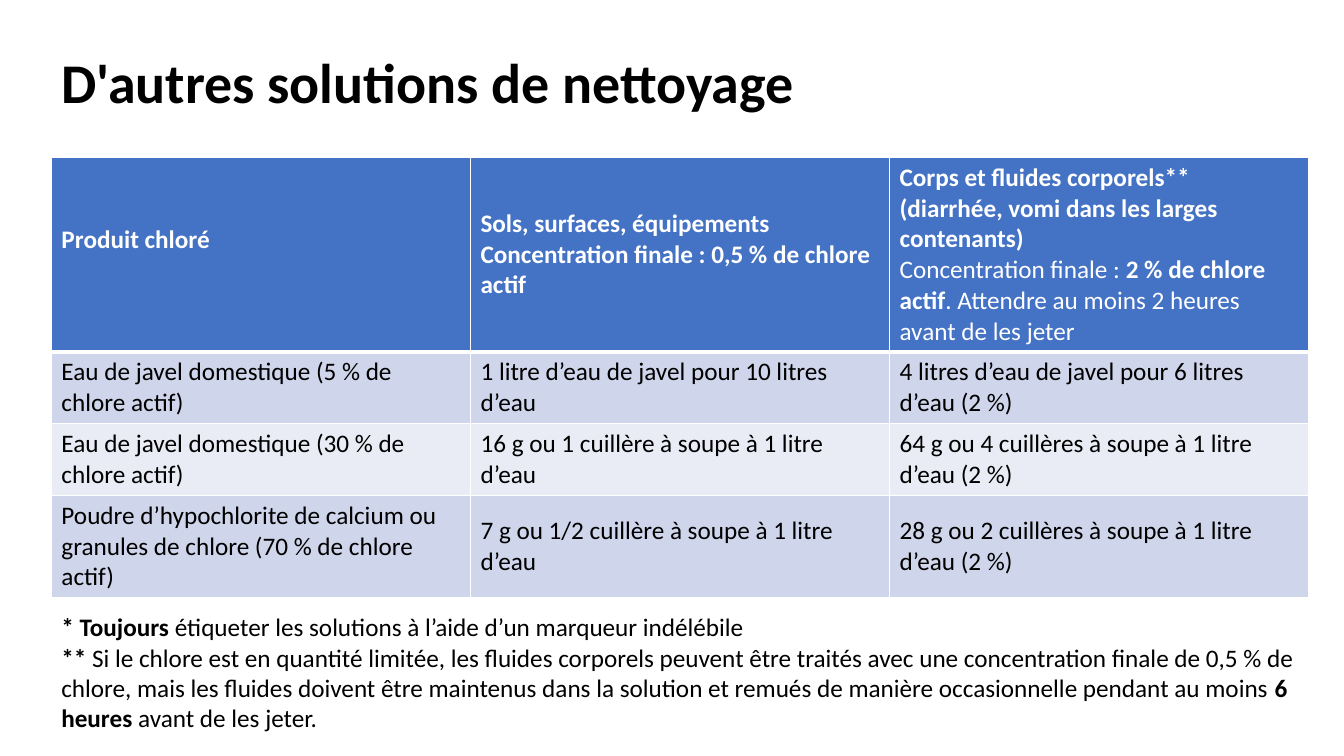
from lxml.etree import SubElement
from pptx import Presentation
from pptx.dml.color import RGBColor as RGB
from pptx.enum.text import MSO_ANCHOR as Anchor, MSO_AUTO_SIZE as Auto, PP_ALIGN as Align
from pptx.oxml.ns import qn
from pptx.util import Inches, Pt

HUES = {"ink": "000000", "white": "FFFFFF", "head": "4472C4",
        "odd": "CFD5EA", "even": "E9EBF5"}
FONT = "Calibri"

# Each paragraph is a list of (text, bold) runs
HEADS = [
    [[("Produit chloré", True)]],
    [[("Sols, surfaces, équipements", True)],
     [("Concentration finale : 0,5 % de chlore actif", True)]],
    [[("Corps et fluides corporels** (diarrhée, vomi dans les larges contenants)", True)],
     [("Concentration finale : ", False), ("2 % de chlore actif", True),
      (". Attendre au moins 2 heures avant de les jeter", False)]],
]
ROWS = [
    ("Eau de javel domestique (5 % de chlore actif)",
     "1 litre d’eau de javel pour 10 litres d’eau",
     "4 litres d’eau de javel pour 6 litres d’eau (2 %)"),
    ("Eau de javel domestique (30 % de chlore actif)",
     "16 g ou 1 cuillère à soupe à 1 litre d’eau",
     "64 g ou 4 cuillères à soupe à 1 litre d’eau (2 %)"),
    ("Poudre d’hypochlorite de calcium ou granules de chlore (70 % de chlore actif)",
     "7 g ou 1/2 cuillère à soupe à 1 litre d’eau",
     "28 g ou 2 cuillères à soupe à 1 litre d’eau (2 %)"),
]
HIGHS = (1.92, 0.71, 0.71, 1.02)
NOTES = [
    [("* Toujours", True),
     (" étiqueter les solutions à l’aide d’un marqueur indélébile", False)],
    [("** ", True),
     ("Si le chlore est en quantité limitée, les fluides corporels peuvent être traités "
      "avec une concentration finale de 0,5 % de chlore, mais les fluides doivent être "
      "maintenus dans la solution et remués de manière occasionnelle pendant au moins ", False),
     ("6 heures", True), (" avant de les jeter.", False)],
]


def style(run, size, hue, bold):
    font = run.font
    font.name, font.size, font.bold = FONT, Pt(size), bold
    font.color.rgb = RGB.from_string(HUES[hue])


def write(frame, paras, hue, size=18):
    for i, parts in enumerate(paras):
        para = frame.add_paragraph() if i else frame.paragraphs[0]
        for text, bold in parts:
            run = para.add_run()
            run.text = text
            style(run, size, hue, bold)


def paint(cell, hue, base):
    # Borders come before the fill in the cell properties
    props = cell._tc.get_or_add_tcPr()
    for side, width in (("L", 1), ("R", 1), ("T", 1), ("B", base)):
        line = SubElement(props, qn("a:ln" + side), w=str(Pt(width)))
        solid = SubElement(line, qn("a:solidFill"))
        SubElement(solid, qn("a:srgbClr"), val=HUES["white"])
    cell.fill.solid()
    cell.fill.fore_color.rgb = RGB.from_string(HUES[hue])
    cell.vertical_anchor = Anchor.MIDDLE


def add_title(slide, x, y, w, h):
    title = slide.shapes.title
    title.left, title.top, title.width, title.height = map(Inches, (x, y, w, h))
    frame = title.text_frame
    frame.text = "D'autres solutions de nettoyage"
    frame.auto_size, frame.vertical_anchor = Auto.NONE, Anchor.MIDDLE
    para = frame.paragraphs[0]
    para.alignment, para.line_spacing = Align.LEFT, 0.9
    style(para.runs[0], 40, "ink", True)


def add_doses(slide, x, y, w):
    box = map(Inches, (x, y, w, sum(HIGHS)))
    table = slide.shapes.add_table(len(HIGHS), len(HEADS), *box).table
    for row, high in zip(table.rows, HIGHS):
        row.height = Inches(high)
    for c, paras in enumerate(HEADS):
        cell = table.cell(0, c)
        paint(cell, "head", 3)
        write(cell.text_frame, paras, "white")
    # Lift the first heading by one line
    table.cell(0, 0).margin_bottom = Inches(0.35)
    for r, texts in enumerate(ROWS, 1):
        for c, text in enumerate(texts):
            cell = table.cell(r, c)
            paint(cell, "odd" if r % 2 else "even", 1)
            write(cell.text_frame, [[(text, False)]], "ink")
    for c in range(len(HEADS)):
        for r in (1,):
            top = table.cell(r, c)._tc.tcPr.find(qn("a:lnT"))
            top.set("w", str(Pt(3)))


def add_notes(slide, x, y, w, h):
    frame = slide.shapes.add_textbox(*map(Inches, (x, y, w, h))).text_frame
    frame.word_wrap = True
    write(frame, NOTES, "ink")


def main():
    deck = Presentation()
    deck.slide_width, deck.slide_height = Inches(13.33), Inches(7.5)
    slide = deck.slides.add_slide(deck.slide_layouts[5])
    left, wide = 0.51, 12.47
    add_title(slide, left, 0.12, 11.75, 1.45)
    add_doses(slide, left, 1.56, wide)
    add_notes(slide, left, 6.02, wide, 1.32)
    deck.save("out.pptx")


if __name__ == "__main__":
    main()
